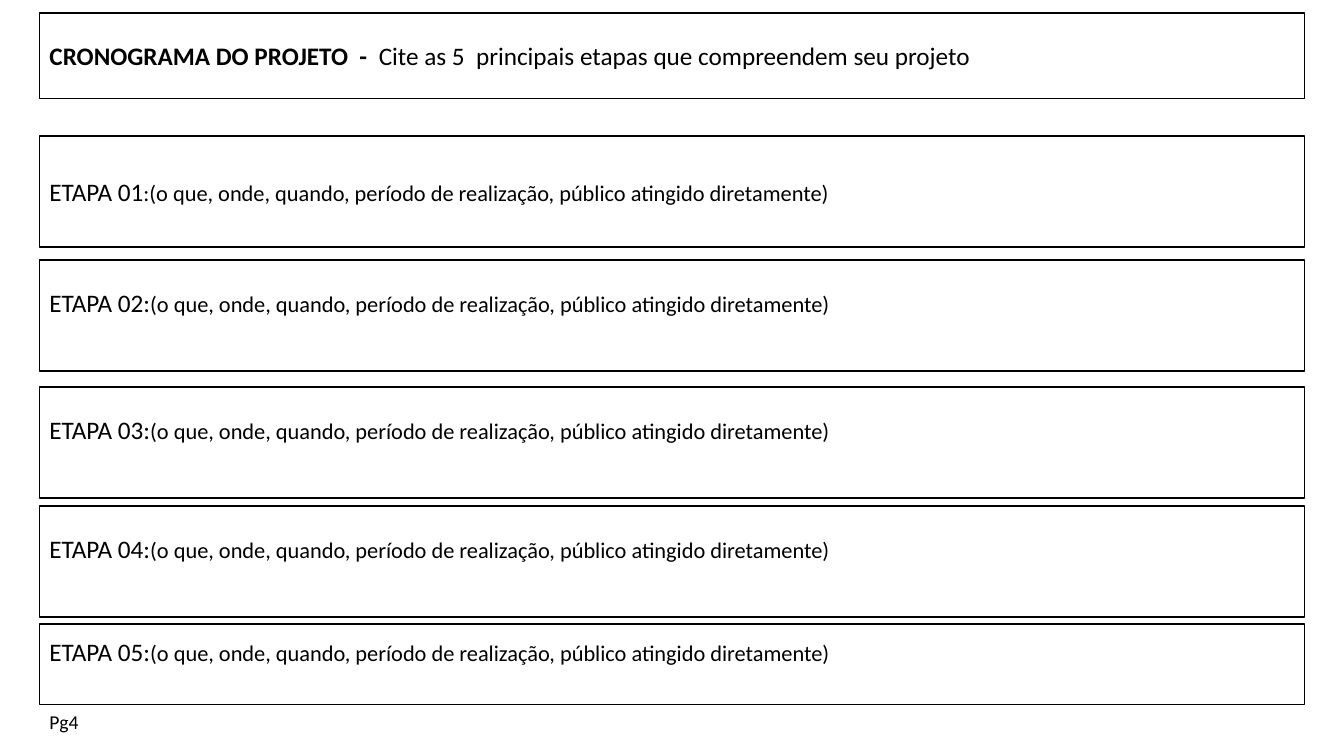
from dataclasses import dataclass

from pptx import Presentation
from pptx import util as u
from pptx.dml.color import RGBColor
from pptx.enum import shapes, text

BLACK = RGBColor(0x00, 0x00, 0x00)
FONT = "Calibri"
TITLE_ONLY = 5
DETAIL = "(o que, onde, quando, período de realização, público atingido diretamente)"

# Grid: one column or row is one percent of the slide
WIDTH, HEIGHT = u.Inches(13.33), u.Inches(7.5)
LEFT, SPAN = 2.93, 94.15
STAGE_ROWS = 14.67
INSET = u.Inches(0.05)
RAISED_INSET = u.Inches(0.3)  # lifts the centred line inside its box


@dataclass
class Stage:
    label: str
    detail: str
    row: float
    rows: float = STAGE_ROWS
    bottom_inset: int = RAISED_INSET


STAGES = [
    Stage("ETAPA 01", ":" + DETAIL, 18, bottom_inset=INSET),
    Stage("ETAPA 02:", DETAIL, 34.4),
    Stage("ETAPA 03:", DETAIL, 51.2),
    Stage("ETAPA 04:", DETAIL, 66.93),
    Stage("ETAPA 05:", DETAIL, 82.53, rows=10.67),
]


def area(row: float, rows: float, columns: float = SPAN) -> tuple[int, int, int, int]:
    """Turn grid rows and columns into left, top, width and height."""
    return (round(WIDTH * LEFT / 100), round(HEIGHT * row / 100),
            round(WIDTH * columns / 100), round(HEIGHT * rows / 100))


def add_text(para, words: str, size: float = 18, bold: bool = False) -> None:
    span = para.add_run()
    span.text = words
    span.font.name = FONT
    span.font.size = u.Pt(size)
    span.font.bold = bold
    span.font.color.rgb = BLACK


def frame_box(box, bottom_inset: int = INSET):
    """Give a box its outline and text layout; return its paragraph."""
    box.fill.background()
    box.line.color.rgb = BLACK
    box.line.width = u.Pt(1)
    frame = box.text_frame
    frame.word_wrap = True
    frame.auto_size = text.MSO_AUTO_SIZE.NONE
    frame.vertical_anchor = text.MSO_ANCHOR.MIDDLE
    frame.margin_bottom = bottom_inset
    para = frame.paragraphs[0]
    para.alignment = text.PP_ALIGN.LEFT
    return para


def add_title(page) -> None:
    title = page.shapes.title
    title.left, title.top, title.width, title.height = area(1.73, 11.33)
    para = frame_box(title)
    add_text(para, "CRONOGRAMA DO PROJETO  -  ", bold=True)
    add_text(para, "Cite as 5  principais etapas que compreendem seu projeto")


def add_stage(page, stage: Stage) -> None:
    box = page.shapes.add_shape(shapes.MSO_SHAPE.RECTANGLE, *area(stage.row, stage.rows))
    box.shadow.inherit = False
    para = frame_box(box, stage.bottom_inset)
    add_text(para, stage.label)
    add_text(para, stage.detail, size=16)


def add_page_mark(page) -> None:
    box = page.shapes.add_textbox(*area(93.2, 4.53, columns=3.75))
    box.text_frame.word_wrap = False
    box.text_frame.auto_size = text.MSO_AUTO_SIZE.SHAPE_TO_FIT_TEXT
    add_text(box.text_frame.paragraphs[0], "Pg4", size=14)


def main() -> None:
    deck = Presentation()
    deck.slide_width, deck.slide_height = WIDTH, HEIGHT
    page = deck.slides.add_slide(deck.slide_layouts[TITLE_ONLY])

    # Heading, stages from top to bottom, page mark
    add_title(page)
    for stage in STAGES:
        add_stage(page, stage)
    add_page_mark(page)

    deck.save("out.pptx")


if __name__ == "__main__":
    main()
